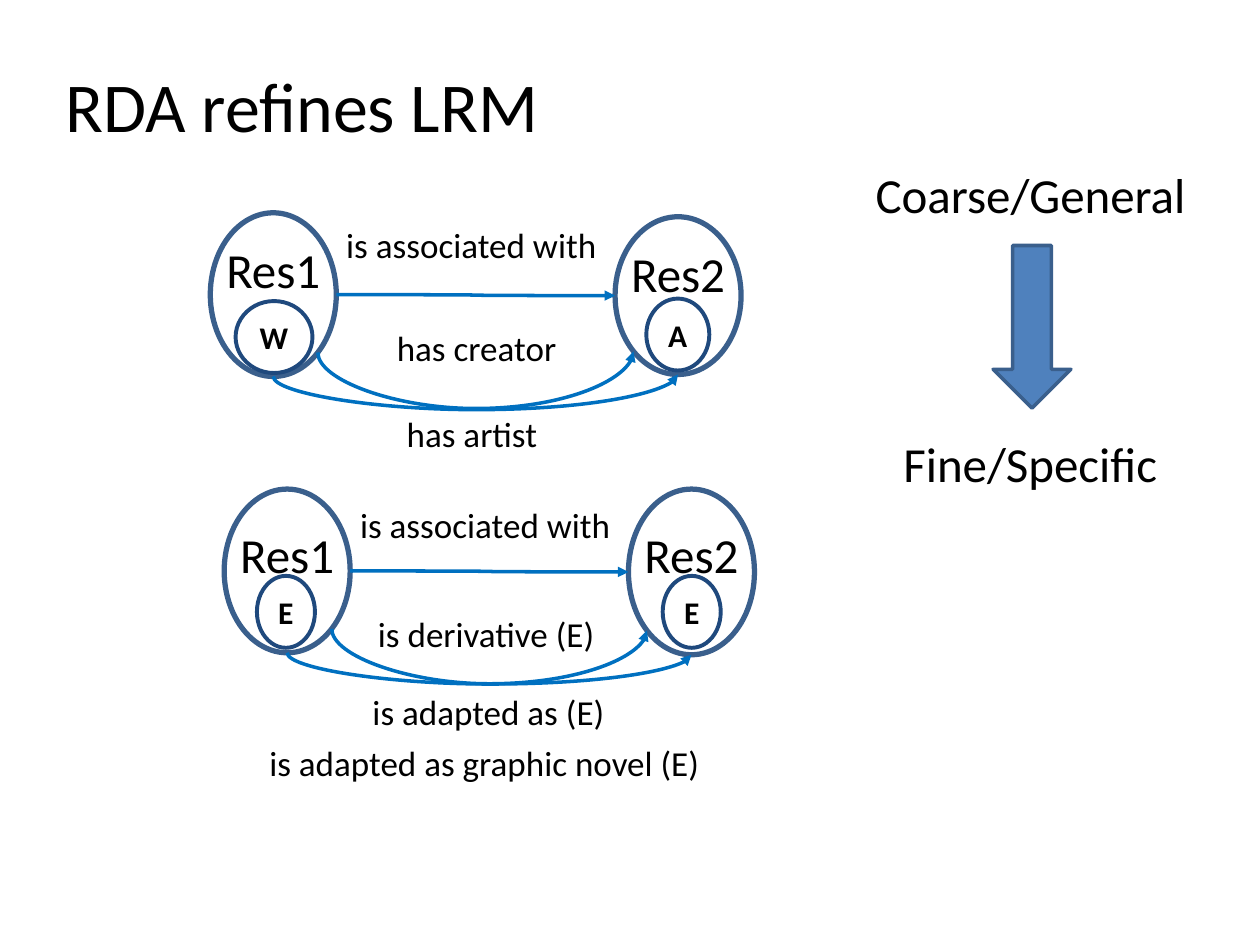
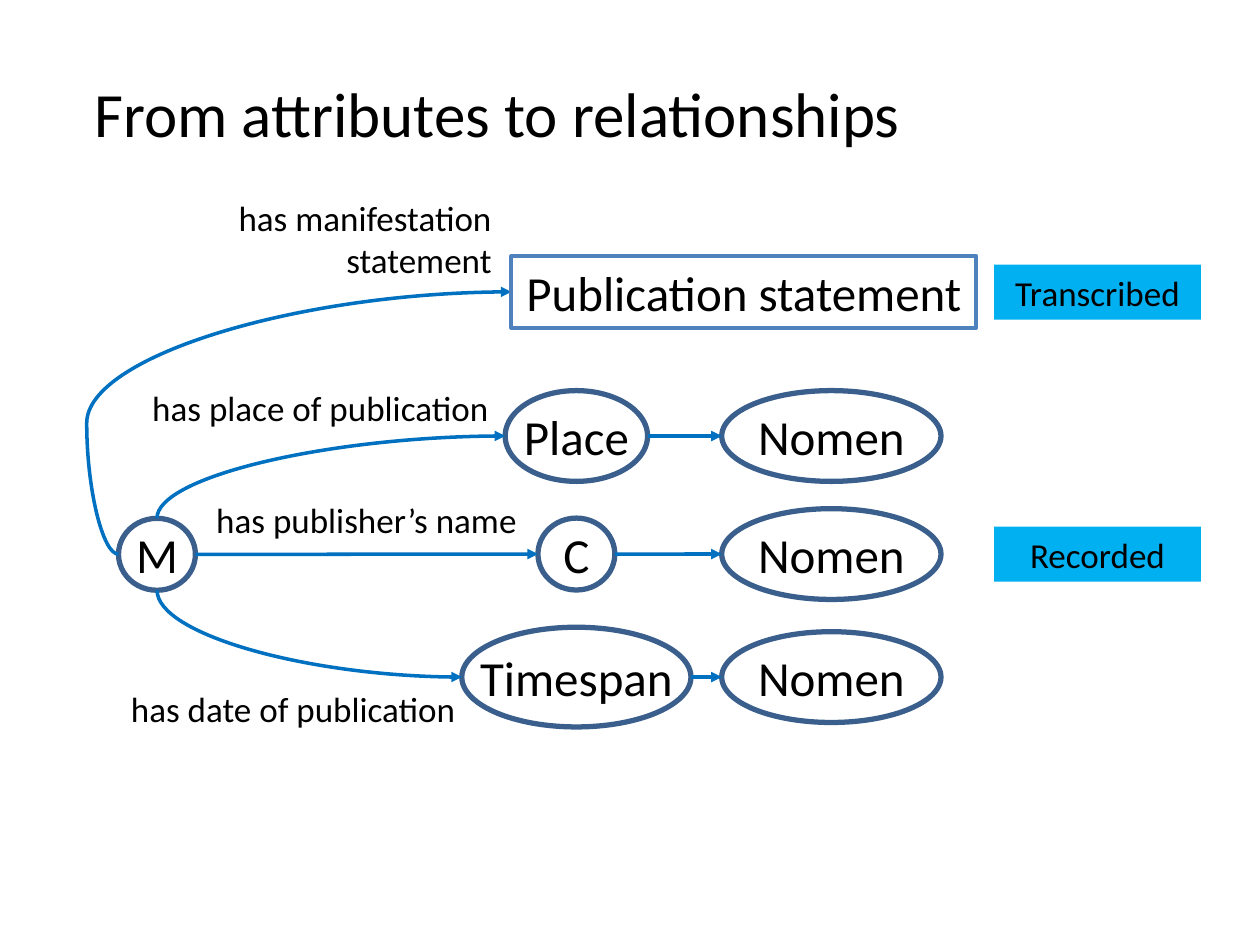
from dataclasses import dataclass
from math import sqrt

from lxml import etree
from pptx import Presentation
from pptx import util as u
from pptx.dml.color import RGBColor
from pptx.enum import shapes, text
from pptx.oxml.ns import qn


@dataclass(frozen=True)
class Theme:
    font: str = "Calibri"
    ink: str = "000000"
    outline: str = "3A5F8C"
    inner_outline: str = "1F497D"
    accent: str = "4F81BD"
    arrow: str = "0070C0"
    badge: str = "00B0F0"
    label: int = 20
    inner: int = 18
    body: int = 28


@dataclass(frozen=True)
class Area:
    """A rectangle in centimetres."""
    left: float
    top: float
    width: float
    height: float

    def at(self, x, y):
        """Point at a fraction of the width and the height."""
        return self.left + x * self.width, self.top + y * self.height


THEME = Theme()
CENTER = text.PP_ALIGN.CENTER
OVAL = shapes.MSO_SHAPE.OVAL
RECTANGLE = shapes.MSO_SHAPE.RECTANGLE
DIAGONAL = sqrt(0.5) / 2  # reach of an ellipse at 45 degrees, as a share of its size

# Content of slide 1: text, left, top, width
REFINES_TITLE = ("RDA refines LRM", 1.07, 1.14, 10.16, 40)
RELATED_PAIRS = [
    {
        "nodes": [("Res1", Area(4.24, 4.29, 2.54, 3.3), 4.7),
                  ("Res2", Area(12.4, 4.37, 2.54, 3.18), 4.78)],
        "inner": [("W", Area(4.75, 6.07, 1.55, 1.45)),
                  ("A", Area(13.03, 6.02, 1.27, 1.45))],
        "sag": 8.26,
        "labels": [("is associated with", 6.73, 4.39, 5.61),
                   ("has creator", 7.75, 6.45, 3.76),
                   ("has artist", 7.95, 8.2, 3.18)],
    },
    {
        "nodes": [("Res1", Area(4.52, 9.86, 2.54, 3.3), 10.44),
                  ("Res2", Area(12.67, 9.86, 2.54, 3.34), 10.44)],
        "inner": [("E", Area(5.18, 11.61, 1.17, 1.45)),
                  ("E", Area(13.36, 11.61, 1.17, 1.45))],
        "sag": 13.79,
        "labels": [("is associated with", 7.01, 10.03, 5.61),
                   ("is derivative (E)", 7.37, 12.22, 4.93),
                   ("is adapted as (E)", 7.26, 13.79, 5.23),
                   ("is adapted as graphic novel (E)", 5.18, 14.83, 9.27)],
    },
]
SCALE_ENDS = [("Coarse/General", 17.4, 3.2, 6.83), ("Fine/Specific", 17.96, 8.61, 5.69)]
SCALE_ARROW = Area(20.02, 4.95, 1.57, 3.28)

# Content of slide 2
ATTRIBUTES_TITLE = ("From attributes to relationships", 1.65, 1.37, 16.94, 36)
MANIFESTATION = ("M", Area(2.39, 10.45, 1.55, 1.45))
# entity, width, height, middle, label (text, left, top, width)
ENTITIES = [
    ("Place", 2.87, 1.83, 8.79, ("has place of publication", 2.82, 7.67, 7.37)),
    ("C", 1.55, 1.45, 11.17, ("has publisher’s name", 4.11, 9.93, 6.63)),
    ("Timespan", 4.62, 2.01, 13.65, ("has date of publication", 2.39, 13.74, 7.11)),
]
ENTITY_CENTER = 11.62
NOMEN_LEFT, NOMEN_WIDTH, NOMEN_HEIGHT = 14.55, 4.42, 1.83
STATEMENT = ("Publication statement", Area(10.31, 5.16, 9.37, 1.45))
STATEMENT_LABEL = ("has manifestation\nstatement", 4.5, 3.84, 5.66)
LOOP_LEFT = 1.75
BADGES = [("Transcribed", 5.89), ("Recorded", 11.17)]
BADGE_LEFT, BADGE_WIDTH, BADGE_HEIGHT = 20.04, 4.17, 1.11


def color(value):
    return RGBColor.from_string(value)


def place(area):
    return [u.Cm(v) for v in (area.left, area.top, area.width, area.height)]


def write(box, words, size, align=None, bold=None):
    frame = box.text_frame
    frame.text = words
    frame.word_wrap = False
    for para in frame.paragraphs:
        para.alignment = align
        for span in para.runs:
            span.font.name = THEME.font
            span.font.size = u.Pt(size)
            span.font.bold = bold
            span.font.color.rgb = color(THEME.ink)


def add_text(parent, words, left, top, width, size=THEME.label, align=None):
    line_count = words.count("\n") + 1
    height = 0.25 + line_count * size * 1.2 * 2.54 / 72
    box = parent.shapes.add_textbox(*place(Area(left, top, width, height)))
    write(box, words, size, align)


def add_figure(parent, kind, area, fill=None, line=None, weight=0):
    figure = parent.shapes.add_shape(kind, *place(area))
    figure.shadow.inherit = False
    if fill:
        figure.fill.solid()
        figure.fill.fore_color.rgb = color(fill)
    else:
        figure.fill.background()
    if line:
        figure.line.color.rgb = color(line)
        figure.line.width = u.Pt(weight)
    else:
        figure.line.fill.background()
    return figure


def add_node(page, name, area, label_top=None):
    """Ellipse grouped with its name, centred unless a label top is given."""
    group = page.shapes.add_group_shape()
    add_figure(group, OVAL, area, line=THEME.outline, weight=3)
    if label_top is None:
        label_top = area.top + area.height / 2 - 0.72
    add_text(group, name, area.left, label_top, area.width, THEME.body, CENTER)


def add_curve(page, start, end, preset="curvedConnector3", bend=None, upright=False):
    """Curved arrow; an upright one leaves its start vertically."""
    (x1, y1), (x2, y2) = start, end
    if upright:
        # The frame lies on its side around the midpoint and is then turned
        middle_x, middle_y = (x1 + x2) / 2, (y1 + y2) / 2
        half_width, half_height = abs(y2 - y1) / 2, abs(x2 - x1) / 2
        x1, x2 = middle_x - half_width, middle_x + half_width
        y1, y2 = middle_y - half_height, middle_y + half_height
    curve = page.shapes.add_connector(shapes.MSO_CONNECTOR.CURVE,
                                      *[u.Cm(v) for v in (x1, y1, x2, y2)])
    curve.line.color.rgb = color(THEME.arrow)
    curve.line.width = u.Pt(2)
    properties = curve._element.spPr
    if upright:
        rising = end[1] < start[1]
        frame = properties.find(qn("a:xfrm"))
        frame.set("rot", str((90 if rising else 270) * 60000))
        frame.set("flipH", "1")
        if rising:
            frame.set("flipV", "1")
    geometry = properties.find(qn("a:prstGeom"))
    geometry.set("prst", preset)
    if bend is not None:
        guides = geometry.find(qn("a:avLst"))
        if guides is None:
            guides = etree.SubElement(geometry, qn("a:avLst"))
        etree.SubElement(guides, qn("a:gd"), name="adj1", fmla=f"val {round(bend * 100000)}")
    etree.SubElement(properties.find(qn("a:ln")), qn("a:tailEnd"), type="triangle")
    etree.SubElement(properties, qn("a:effectLst"))


def add_sagging_curve(page, start, end, bottom):
    bend = (bottom - start[1]) / (end[1] - start[1])
    add_curve(page, start, end, bend=bend, upright=True)


def build_refines(page):
    add_text(page, *REFINES_TITLE)
    for pair in RELATED_PAIRS:
        for node in pair["nodes"]:
            add_node(page, *node)
        source, target = [area for _, area, _ in pair["nodes"]]

        # Arrows from the general to the specific relationship
        add_curve(page, source.at(1, 0.5), target.at(0, 0.5))
        low = 0.5 + DIAGONAL
        add_sagging_curve(page, source.at(low, low), target.at(0.5 - DIAGONAL, low), pair["sag"])
        add_sagging_curve(page, source.at(0.5, 1), target.at(0.5, 1), pair["sag"])

        for label in pair["labels"]:
            add_text(page, *label)
        for letter, area in pair["inner"]:
            inner = add_figure(page, OVAL, area, line=THEME.inner_outline, weight=2.25)
            write(inner, letter, THEME.inner, CENTER, bold=True)

    # Scale from coarse to fine
    add_figure(page, shapes.MSO_SHAPE.DOWN_ARROW, SCALE_ARROW, THEME.accent, THEME.outline, 2)
    for scale_end in SCALE_ENDS:
        add_text(page, *scale_end, THEME.body)


def build_attributes(page):
    add_text(page, *ATTRIBUTES_TITLE)
    add_node(page, *MANIFESTATION)
    source = MANIFESTATION[1]

    # One row for each entity and its nomen
    for name, width, height, middle, label in ENTITIES:
        entity = Area(ENTITY_CENTER - width / 2, middle - height / 2, width, height)
        nomen = Area(NOMEN_LEFT, middle - NOMEN_HEIGHT / 2, NOMEN_WIDTH, NOMEN_HEIGHT)
        add_node(page, name, entity)
        add_node(page, "Nomen", nomen)
        add_text(page, *label)
        add_curve(page, entity.at(1, 0.5), nomen.at(0, 0.5))
        if source.top < middle < source.top + source.height:
            add_curve(page, source.at(1, 0.5), entity.at(0, 0.5))
        else:
            side = 0 if middle < source.top else 1
            add_curve(page, source.at(0.5, side), entity.at(0, 0.5),
                      "curvedConnector2", upright=True)

    # Transcribed statement
    words, area = STATEMENT
    start, end = source.at(0, 0.5), area.at(0, 0.5)
    add_curve(page, start, end, bend=(LOOP_LEFT - start[0]) / (end[0] - start[0]))
    statement = add_figure(page, RECTANGLE, area, line=THEME.accent, weight=2.25)
    write(statement, words, THEME.body, CENTER)
    add_text(page, *STATEMENT_LABEL, align=text.PP_ALIGN.RIGHT)

    # Badges
    for words, middle in BADGES:
        area = Area(BADGE_LEFT, middle - BADGE_HEIGHT / 2, BADGE_WIDTH, BADGE_HEIGHT)
        write(add_figure(page, RECTANGLE, area, THEME.badge), words, THEME.label, CENTER)


def main():
    deck = Presentation()
    deck.slide_width, deck.slide_height = u.Cm(25.4), u.Cm(19.05)
    for build in (build_refines, build_attributes):
        build(deck.slides.add_slide(deck.slide_layouts[6]))
    deck.save("out.pptx")


if __name__ == "__main__":
    main()
